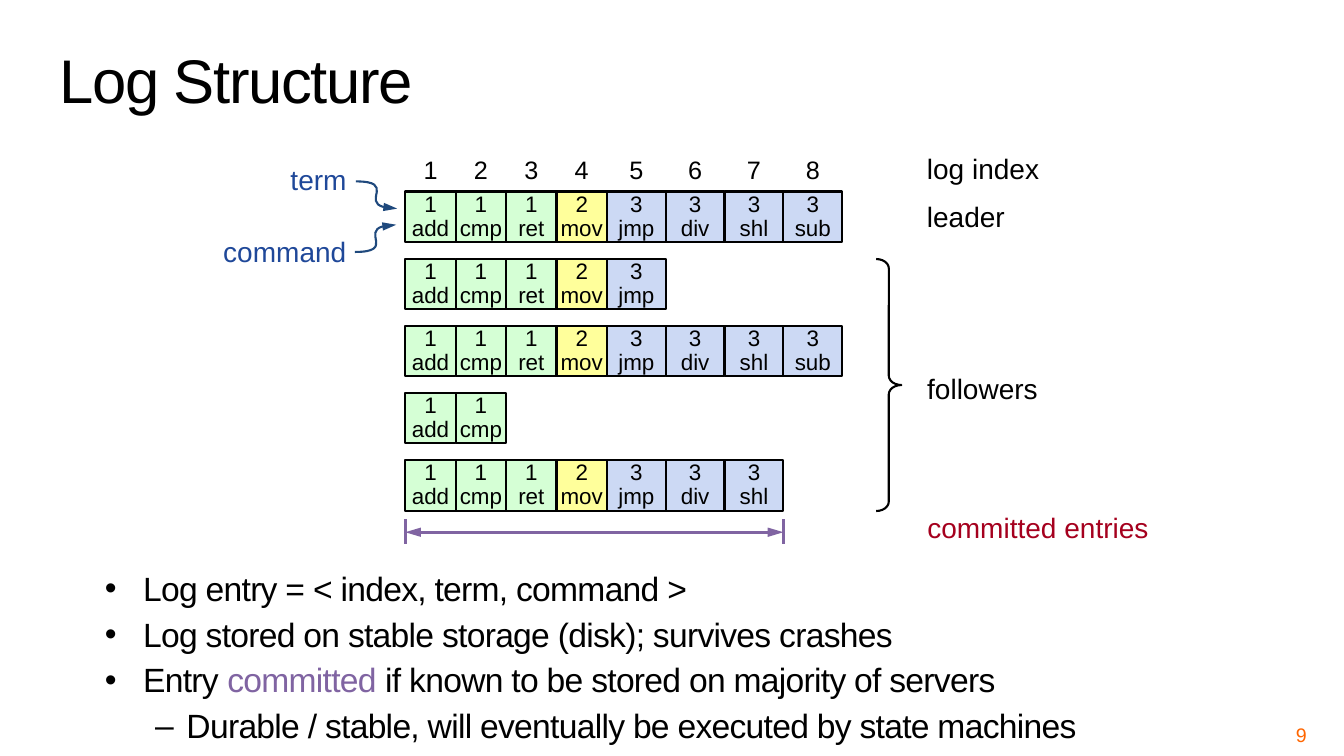
from lxml import etree
from pptx import Presentation
from pptx import util as u
from pptx.dml.color import RGBColor
from pptx.enum import shapes, text
from pptx.oxml.ns import qn

FONT = "Arial"
BLACK, PURPLE, BLUE, RED = "000000", "8064A2", "1F4899", "A5001E"
TERM_FILLS = {1: "D5FFD5", 2: "FFFF9B", 3: "CCD9F4"}

# Log contents: every server holds a prefix of the leader's log
ENTRIES = [(1, "add"), (1, "cmp"), (1, "ret"), (2, "mov"),
           (3, "jmp"), (3, "div"), (3, "shl"), (3, "sub")]
LOG_LENGTHS = [8, 5, 8, 2, 7]
COMMITTED = 7

# Log grid, in inches
WIDTHS = [0.5] * 4 + [7 / 12] * 4
EDGES = [4.02 + sum(WIDTHS[:i]) for i in range(len(WIDTHS) + 1)]
LOG_TOP, LOG_PITCH, CELL_HEIGHT = 1.9, 2 / 3, 0.5

ALIGN = text.PP_ALIGN
ANCHOR = text.MSO_ANCHOR


def color(value):
    return RGBColor.from_string(value)


def add_span(para, words, size, shade=BLACK, spacing=0):
    span = para.add_run()
    span.text = words
    span.font.name = FONT
    span.font.size = u.Pt(size)
    span.font.color.rgb = color(shade)
    if spacing:
        span._r.get_or_add_rPr().set("spc", str(int(spacing * 100)))


def set_frame(frame, inset, anchor=ANCHOR.TOP, wrap=True):
    frame.word_wrap = wrap
    frame.vertical_anchor = anchor
    if inset is not None:
        frame.margin_left = frame.margin_right = u.Inches(inset)
        frame.margin_top = frame.margin_bottom = u.Inches(inset)


def add_text(page, left, top, width, height, inset=None, anchor=ANCHOR.TOP, wrap=True):
    box = page.shapes.add_textbox(*map(u.Inches, (left, top, width, height)))
    set_frame(box.text_frame, inset, anchor, wrap)
    return box.text_frame


def add_label(page, left, top, width, words, shade=BLACK):
    para = add_text(page, left, top, width, 0.34, inset=0, wrap=False).paragraphs[0]
    para.alignment = ALIGN.CENTER
    add_span(para, words, 20, shade)


def add_index(page, column):
    frame = add_text(page, EDGES[column], 1.48, WIDTHS[column], 0.4)
    para = frame.paragraphs[0]
    para.alignment = ALIGN.CENTER
    add_span(para, str(column + 1), 18)


def add_entry(page, row, column):
    term, command = ENTRIES[column]
    cell = page.shapes.add_shape(
        shapes.MSO_SHAPE.RECTANGLE, u.Inches(EDGES[column]),
        u.Inches(LOG_TOP + row * LOG_PITCH),
        u.Inches(WIDTHS[column]), u.Inches(CELL_HEIGHT))
    cell.shadow.inherit = False
    cell.fill.solid()
    cell.fill.fore_color.rgb = color(TERM_FILLS[term])
    set_line(cell.line, BLACK, 1.5)
    set_frame(cell.text_frame, 0, ANCHOR.MIDDLE)
    para = cell.text_frame.paragraphs[0]
    para.alignment = ALIGN.CENTER
    para.line_spacing = u.Pt(17)
    add_span(para, str(term), 16)
    para.add_line_break()
    add_span(para, command, 16)


def set_line(line, shade, width, ends=()):
    line.color.rgb = color(shade)
    line.width = u.Pt(width)
    for end in ends:
        etree.SubElement(line._get_or_add_ln(), qn(f"a:{end}"),
                         type="triangle", w="med", len="lg")


def add_measure_line(group, x1, y1, x2, y2, ends=()):
    line = group.shapes.add_connector(
        shapes.MSO_CONNECTOR.STRAIGHT, *map(u.Inches, (x1, y1, x2, y2)))
    set_line(line.line, PURPLE, 2.25, ends)
    etree.SubElement(line._element.spPr, qn("a:effectLst"))


def add_committed_range(page):
    group = page.shapes.add_group_shape()
    left, right = EDGES[0], EDGES[COMMITTED]
    for x in (left, right):
        add_measure_line(group, x, 5.15, x, 5.4)
    add_measure_line(group, left, 5.28, right, 5.28, ("headEnd", "tailEnd"))


def add_curved_arrow(page, *points):
    """Draw one cubic curve through start, two control points and end."""
    points = [(u.Inches(x), u.Inches(y)) for x, y in points]
    start, end = points[0], points[-1]
    builder = page.shapes.build_freeform(*start)
    builder.add_line_segments([end], close=False)
    curve = builder.convert_to_shape()
    curve.shadow.inherit = False
    curve.fill.background()
    set_line(curve.line, "1F497D", 1.5, ("tailEnd",))
    # Turn the straight segment into a curve
    segment = next(curve._element.iter(qn("a:lnTo")))
    bezier = etree.Element(qn("a:cubicBezTo"))
    for x, y in points[1:]:
        etree.SubElement(bezier, qn("a:pt"),
                         x=str(x - curve.left), y=str(y - curve.top))
    segment.getparent().replace(segment, bezier)


def add_brace(page):
    brace = page.shapes.add_shape(
        shapes.MSO_SHAPE.RIGHT_BRACE, *map(u.Inches, (8.69, 2.57, 0.25, 2.5)))
    brace.adjustments[0] = 0.37
    brace.shadow.inherit = False
    brace.fill.background()
    set_line(brace.line, BLACK, 1.5)


def add_bullet(para, mark, margin, hanging, spans, before):
    props = para._p.get_or_add_pPr()
    props.set("marL", str(u.Inches(margin)))
    props.set("indent", str(-u.Inches(hanging)))
    etree.SubElement(props, qn("a:buFont"), typeface=FONT)
    etree.SubElement(props, qn("a:buChar"), char=mark)
    para.space_before = u.Pt(before)
    for words, shade in spans:
        add_span(para, words, 24, shade, -0.5)


def add_notes_list(page):
    bullets = [
        (0, [("Log entry = < index, term, command >", BLACK)]),
        (0, [("Log stored on stable storage (disk); survives crashes", BLACK)]),
        (0, [("Entry ", BLACK), ("committed", PURPLE),
             (" if known to be stored on majority of servers", BLACK)]),
        (1, [("Durable / stable, will eventually be executed by state machines", BLACK)]),
    ]
    styles = [("•", 0.38, 0.38), ("–", 0.81, 0.31)]
    frame = add_text(page, 1, 5.59, 10.6, 1.91, inset=0.04)
    for i, (level, spans) in enumerate(bullets):
        para = frame.add_paragraph() if i else frame.paragraphs[0]
        para.level = level
        add_bullet(para, *styles[level], spans, before=4 if i else 0)


def main():
    deck = Presentation()
    deck.slide_width, deck.slide_height = u.Inches(13.33), u.Inches(7.5)
    page = deck.slides.add_slide(deck.slide_layouts[6])

    # Title
    title = add_text(page, 0.49, 0.02, 12.62, 1.17, anchor=ANCHOR.BOTTOM).paragraphs[0]
    title.line_spacing = 0.8
    add_span(title, "Log Structure", 44, spacing=-1)

    # Logs of the leader and its followers
    for column in range(len(ENTRIES)):
        add_index(page, column)
    for row, length in enumerate(LOG_LENGTHS):
        for column in range(length):
            add_entry(page, row, column)

    # Labels and markers around the logs
    add_label(page, 9.19, 1.5, 1.12, "log index")
    add_label(page, 9.19, 1.98, 0.78, "leader")
    add_label(page, 9.19, 3.69, 1.11, "followers")
    add_label(page, 9.19, 5.06, 2.21, "committed entries", RED)
    add_label(page, 2.88, 1.61, 0.56, "term", BLUE)
    add_label(page, 2.21, 2.33, 1.23, "command", BLUE)
    add_brace(page)
    add_committed_range(page)
    add_curved_arrow(page, (3.53, 1.8), (3.93, 1.8), (3.49, 2.06), (3.94, 2.07))
    add_curved_arrow(page, (3.52, 2.5), (3.92, 2.5), (3.49, 2.24), (3.93, 2.23))

    # Explanation and page number
    add_notes_list(page)
    number = add_text(page, 9.89, 7.17, 3.11, 0.23, 0.04, ANCHOR.MIDDLE).paragraphs[0]
    number.alignment = ALIGN.RIGHT
    add_span(number, "9", 14, "FF6600")

    deck.save("out.pptx")


if __name__ == "__main__":
    main()
